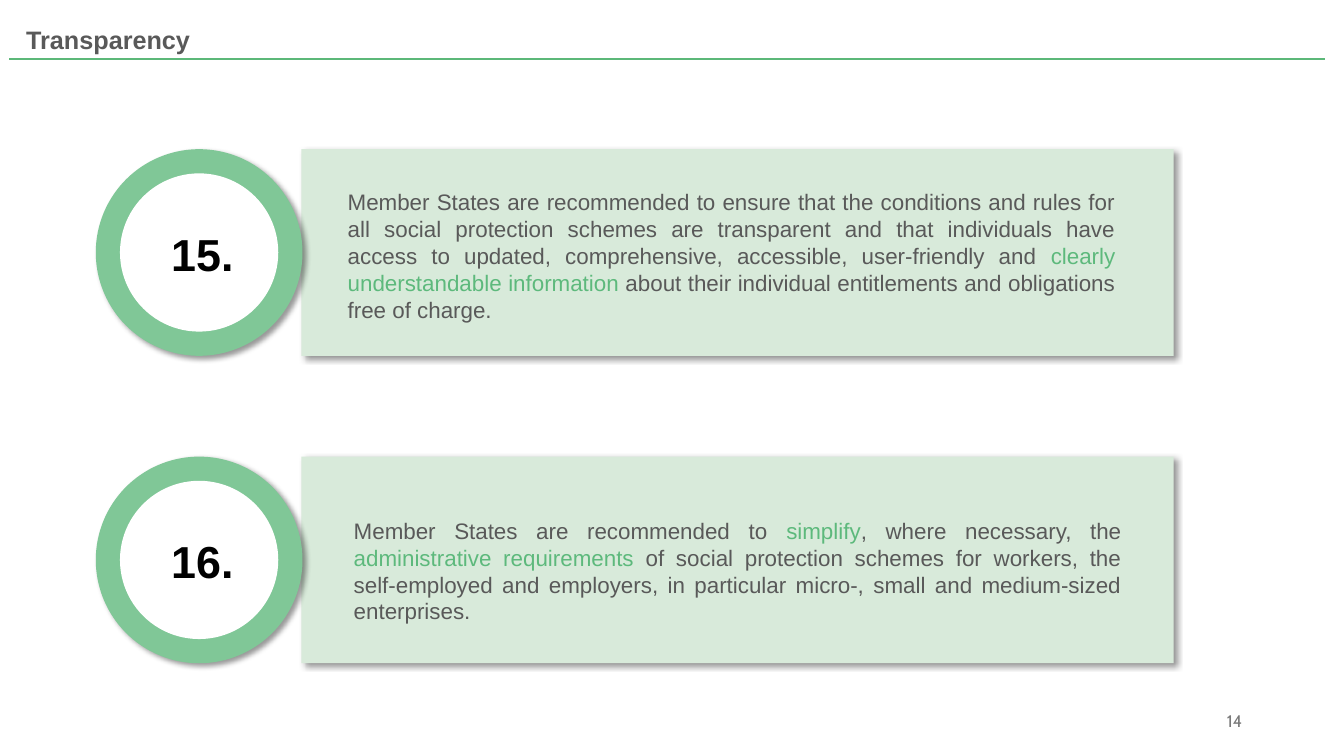
from lxml import etree
from pptx import Presentation
from pptx import util as u
from pptx.dml import color as dml
from pptx.enum import shapes, text
from pptx.oxml import ns

COLOURS = {
    "panel": "D8EADA",
    "ring": "80C797",
    "disc": "FFFFFF",
    "rule": "5CB879",
    "accent": "5DB97C",
    "body": "595959",
    "number": "000000",
    "page": "797979",
    "shadow": "000000",
}
FORMATS = {
    "title": {"name": "Arial", "size": u.Pt(18), "bold": True},
    "body": {"name": "Arial", "size": u.Pt(16), "bold": False},
    "number": {"name": "Arial", "size": u.Pt(32), "bold": True},
    "page": {"name": "Cabin", "size": u.Pt(12), "bold": False},
}
SHADOW = {"blurRad": u.Pt(4), "dist": u.Pt(3), "dir": 45 * 60000, "algn": "tl", "rotWithShape": 0}
RECOMMENDATIONS = [
    {
        "number": "15.",
        "top": 1.48,
        "text_box": (2.4, 0.34, 7.81, 1.45),
        "spans": [
            ("Member States are recommended to ensure that the conditions and rules for all social "
             "protection schemes are transparent and that individuals have access to updated, "
             "comprehensive, accessible, user-friendly and ", "body"),
            ("clearly understandable information ", "accent"),
            ("about their individual entitlements and obligations free of charge.", "body"),
        ],
    },
    {
        "number": "16.",
        "top": 4.53,
        "text_box": (2.46, 0.55, 7.81, 1.18),
        "spans": [
            ("Member States are recommended to ", "body"),
            ("simplify", "accent"),
            (", where necessary, the ", "body"),
            ("administrative requirements ", "accent"),
            ("of social protection schemes for workers, the self-employed and employers, in "
             "particular micro-, small and medium-sized enterprises.", "body"),
        ],
    },
]


def inches(box):
    return [u.Inches(length) for length in box]


def rgb(name):
    return dml.RGBColor.from_string(COLOURS[name])


def write(frame, spans, style, align=text.PP_ALIGN.LEFT, anchor=text.MSO_ANCHOR.TOP):
    settings = {"word_wrap": True, "auto_size": text.MSO_AUTO_SIZE.NONE, "vertical_anchor": anchor}
    for key, value in settings.items():
        setattr(frame, key, value)
    para = frame.paragraphs[0]
    para.alignment = align
    for words, colour in spans:
        span = para.add_run()
        span.text = words
        span.font.color.rgb = rgb(colour)
        for key, value in FORMATS[style].items():
            setattr(span.font, key, value)


def add_text(page, box, *args, **options):
    write(page.shapes.add_textbox(*inches(box)).text_frame, *args, **options)


def add_filled(page, kind, box, colour, shadowed=False):
    shape = page.shapes.add_shape(kind, *inches(box))
    shape.fill.solid()
    shape.fill.fore_color.rgb = rgb(colour)
    shape.line.fill.background()
    shape.shadow.inherit = False
    if shadowed:
        effects = shape._element.spPr.find(ns.qn("a:effectLst"))
        outer = etree.SubElement(effects, ns.qn("a:outerShdw"))
        for key, value in SHADOW.items():
            outer.set(key, str(value))
        tint = etree.SubElement(outer, ns.qn("a:srgbClr"), val=COLOURS["shadow"])
        etree.SubElement(tint, ns.qn("a:alpha"), val="40000")


def add_header(page, left, top, width):
    title = page.shapes.title
    places = inches((left + 0.07, top, 6.91, 0.39))
    for key, value in zip(("left", "top", "width", "height"), places):
        setattr(title, key, value)
    write(title.text_frame, [("Transparency", "body")], "title")
    ends = inches((left, top + 0.4, left + width, top + 0.4))
    rule = page.shapes.add_connector(shapes.MSO_CONNECTOR.STRAIGHT, *ends)
    rule.line.color.rgb = rgb("rule")
    rule.line.width = u.Pt(1.5)
    etree.SubElement(rule._element.spPr, ns.qn("a:effectLst"))


def add_recommendation(page, left, top, width, height, item):
    circle = shapes.MSO_SHAPE.FLOWCHART_CONNECTOR
    panel = (left + height - 0.01, top, width - height + 0.01, height)
    add_filled(page, shapes.MSO_SHAPE.RECTANGLE, panel, "panel", shadowed=True)
    add_filled(page, circle, (left, top, height, height), "ring", shadowed=True)
    add_filled(page, circle, (left + 0.24, top + 0.24, height - 0.48, height - 0.48), "disc")
    add_text(page, (left + 0.65, top + 0.72, 1.12, 0.64), [(item["number"], "number")], "number")
    across, down, text_width, text_height = item["text_box"]
    add_text(page, (left + across, top + down, text_width, text_height),
             item["spans"], "body", align=text.PP_ALIGN.JUSTIFY)


def add_page_number(page, box):
    add_text(page, box, [("14", "page")], "page",
             align=text.PP_ALIGN.RIGHT, anchor=text.MSO_ANCHOR.MIDDLE)


def main():
    deck = Presentation()
    deck.slide_width, deck.slide_height = inches((13.33, 7.5))
    page = deck.slides.add_slide(deck.slide_layouts.get_by_name("Title Only"))
    add_header(page, 0.09, 0.19, 13.05)
    for item in RECOMMENDATIONS:
        add_recommendation(page, 0.95, item["top"], 10.69, 2.05, item)
    add_page_number(page, (9.42, 6.95, 3, 0.4))
    deck.save("out.pptx")


if __name__ == "__main__":
    main()
